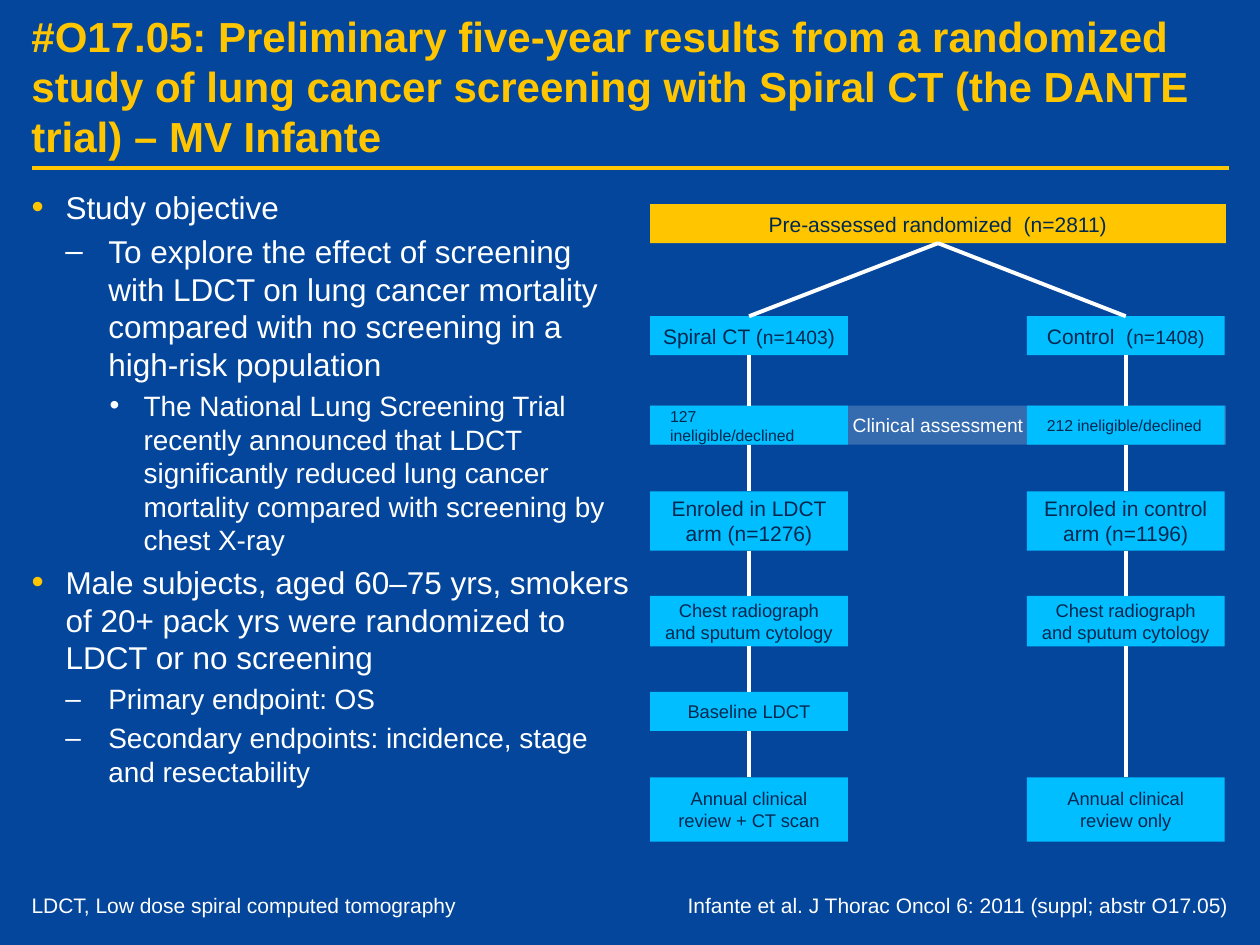
import pptx
import pptx.util
import pptx.dml.color
import pptx.enum.shapes
import pptx.enum.text
import pptx.oxml.ns
from lxml import etree

Inches, Pt = pptx.util.Inches, pptx.util.Pt
RGBColor = pptx.dml.color.RGBColor
ALIGN = pptx.enum.text.PP_ALIGN
ANCHOR = pptx.enum.text.MSO_ANCHOR
qn = pptx.oxml.ns.qn

NAVY = RGBColor(0x03, 0x46, 0x9C)
GOLD = RGBColor(0xFF, 0xC6, 0x00)
CYAN = RGBColor(0x00, 0xBE, 0xFF)
INK = RGBColor(0x00, 0x28, 0x50)
WHITE = RGBColor(0xFF, 0xFF, 0xFF)

# Content
TITLE = ("#O17.05: Preliminary five-year results from a randomized study of lung "
         "cancer screening with Spiral CT (the DANTE trial) – MV Infante")
BODY = [  # level, size, text
    (0, 18, "Study objective"),
    (1, 18, "To explore the effect of screening with LDCT on lung cancer mortality "
            "compared with no screening in a high-risk population"),
    (2, 16, "The National Lung Screening Trial recently announced that LDCT "
            "significantly reduced lung cancer mortality compared with screening "
            "by chest X-ray"),
    (0, 18, "Male subjects, aged 60–75 yrs, smokers of 20+ pack yrs were randomized "
            "to LDCT or no screening"),
    (1, 16, "Primary endpoint: OS"),
    (1, 16, "Secondary endpoints: incidence, stage and resectability"),
]
BULLETS = [  # mark, text indent, hanging, colour, size %
    ("•", 0.27, 0.27, GOLD, 110),
    ("–", 0.61, 0.34, None, None),
    ("•", 0.89, 0.27, None, None),
]
FOOTNOTE = "LDCT, Low dose spiral computed tomography"
CITATION = "Infante et al. J Thorac Oncol 6: 2011 (suppl; abstr O17.05)"
ROOT = "Pre-assessed randomized  (n=2811)"
BRIDGE = "Clinical assessment"

# Flow chart rows: top, height; each arm lists row, runs of (text, size)
ROWS = {"arm": (2.51, 0.31), "declined": (3.22, 0.31), "enroled": (3.9, 0.47),
        "radiograph": (4.73, 0.4), "baseline": (5.49, 0.31), "annual": (6.17, 0.51)}
ARMS = [
    (5.16, [
        ("arm", [("Spiral CT (", 12), ("n=1403", 11), (")", 12)]),
        ("declined", [("127\t ineligible/declined", 9)]),
        ("enroled", [("Enroled in LDCT arm (n=1276)", 12)]),
        ("radiograph", [("Chest radiograph and sputum cytology", 10.5)]),
        ("baseline", [("Baseline LDCT", 10.5)]),
        ("annual", [("Annual clinical review + CT scan", 10.5)]),
    ]),
    (8.15, [
        ("arm", [("Control  (", 12), ("n=1408)", 11)]),
        ("declined", [("212 ineligible/declined", 9)]),
        ("enroled", [("Enroled in control arm (n=1196)", 12)]),
        ("radiograph", [("Chest radiograph and sputum cytology", 10.5)]),
        ("annual", [("Annual clinical review only", 10.5)]),
    ]),
]
LEFT, FULL_W, BOX_W = 5.16, 4.57, 1.57
ROOT_TOP, ROOT_H = 1.62, 0.31

prs = pptx.Presentation()
prs.slide_width, prs.slide_height = Inches(10), Inches(7.5)
slide = prs.slides.add_slide(prs.slide_layouts[6])
slide.background.fill.solid()
slide.background.fill.fore_color.rgb = NAVY


def write(p, runs, color=WHITE, bold=False, align=ALIGN.LEFT, before=0):
    """Fill a paragraph with (text, size) runs."""
    p.alignment = align
    p.space_before = Pt(before)
    for text, size in runs:
        r = p.add_run()
        r.text = text
        r.font.name, r.font.size, r.font.bold = "Arial", Pt(size), bold
        r.font.color.rgb = color


def indent(p, left, hanging=0):
    pPr = p._p.get_or_add_pPr()
    pPr.set("marL", str(Inches(left)))
    pPr.set("indent", str(-Inches(hanging)))
    return pPr


def set_bullet(p, mark, left, hanging, color, percent):
    pPr = indent(p, left, hanging)
    if color is not None:
        clr = etree.SubElement(pPr, qn("a:buClr"))
        etree.SubElement(clr, qn("a:srgbClr"), val=str(color))
        etree.SubElement(pPr, qn("a:buSzPct"), val=str(percent * 1000))
    etree.SubElement(pPr, qn("a:buFont"), typeface="Arial")
    etree.SubElement(pPr, qn("a:buChar"), char=mark)


def add_text(x, y, w, h, inset_top=0, inset_bottom=0, anchor=ANCHOR.TOP):
    tf = slide.shapes.add_textbox(Inches(x), Inches(y), Inches(w), Inches(h)).text_frame
    tf.word_wrap, tf.vertical_anchor = True, anchor
    tf.margin_left = tf.margin_right = 0
    tf.margin_top, tf.margin_bottom = Inches(inset_top), Inches(inset_bottom)
    return tf


def add_box(x, y, w, h, runs, fill=CYAN, color=INK, align=ALIGN.CENTER, alpha=None):
    sp = slide.shapes.add_shape(pptx.enum.shapes.MSO_SHAPE.RECTANGLE,
                                Inches(x), Inches(y), Inches(w), Inches(h))
    sp.shadow.inherit = False
    sp.line.fill.background()
    sp.fill.solid()
    sp.fill.fore_color.rgb = fill
    if alpha is not None:
        clr = sp._element.spPr.find(".//" + qn("a:srgbClr"))
        etree.SubElement(clr, qn("a:alpha"), val=str(alpha * 1000))
    tf = sp.text_frame
    tf.word_wrap, tf.vertical_anchor = True, ANCHOR.MIDDLE
    write(tf.paragraphs[0], runs, color=color, align=align)
    return tf.paragraphs[0]


def add_line(x1, y1, x2, y2, color=WHITE):
    ln = slide.shapes.add_connector(pptx.enum.shapes.MSO_CONNECTOR.STRAIGHT,
                                    Inches(x1), Inches(y1), Inches(x2), Inches(y2))
    ln.line.color.rgb, ln.line.width = color, Pt(2.25)
    etree.SubElement(ln._element.spPr, qn("a:effectLst"))


# Title and rule
add_line(0.25, 1.33, 9.75, 1.33, GOLD)
tf = add_text(0.25, 0.25, 9.5, 1.03, inset_top=0.05, anchor=ANCHOR.BOTTOM)
write(tf.paragraphs[0], [(TITLE, 24)], color=GOLD, bold=True)

# Bulleted text
tf = add_text(0.25, 1.44, 4.75, 5.81, inset_top=0.05, inset_bottom=0.05)
for i, (level, size, text) in enumerate(BODY):
    p = tf.add_paragraph() if i else tf.paragraphs[0]
    p.level = level
    write(p, [(text, size)], before=0.2 * size)
    set_bullet(p, *BULLETS[level])

# Footers
for x, text, align in [(0.25, FOOTNOTE, ALIGN.LEFT), (5, CITATION, ALIGN.RIGHT)]:
    tf = add_text(x, 7.08, 4.75, 0.2)
    write(tf.paragraphs[0], [(text, 12)], align=align, before=2.4)

# Flow chart: shared boxes, then each arm with its links
add_box(LEFT, ROOT_TOP, FULL_W, ROOT_H, [(ROOT, 12)], fill=GOLD)
add_box(LEFT, ROWS["declined"][0], FULL_W, ROWS["declined"][1], [(BRIDGE, 11)],
        fill=WHITE, color=WHITE, alpha=20)
for x, boxes in ARMS:
    mid = x + BOX_W / 2
    from_x, from_y = LEFT + FULL_W / 2, ROOT_TOP + ROOT_H
    for row, runs in boxes:
        top, height = ROWS[row]
        declined = row == "declined"
        p = add_box(x, top, BOX_W, height, runs,
                    align=ALIGN.LEFT if declined else ALIGN.CENTER)
        if declined:
            tabs = etree.SubElement(indent(p, 0.06), qn("a:tabLst"))
            etree.SubElement(tabs, qn("a:tab"), pos=str(Inches(0.31)), algn="l")
        add_line(from_x, from_y, mid, top)
        from_x, from_y = mid, top + height

prs.save("out.pptx")
